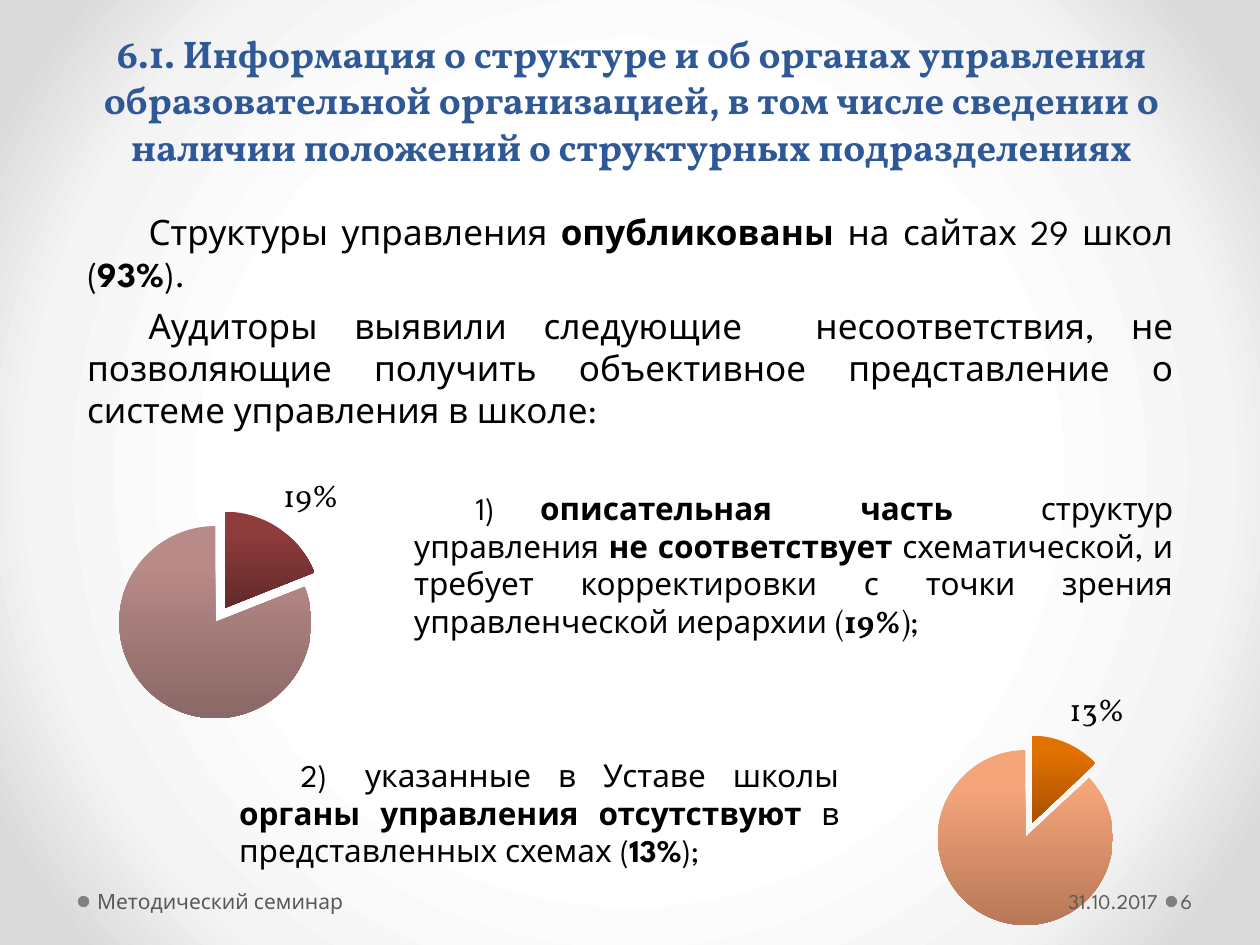
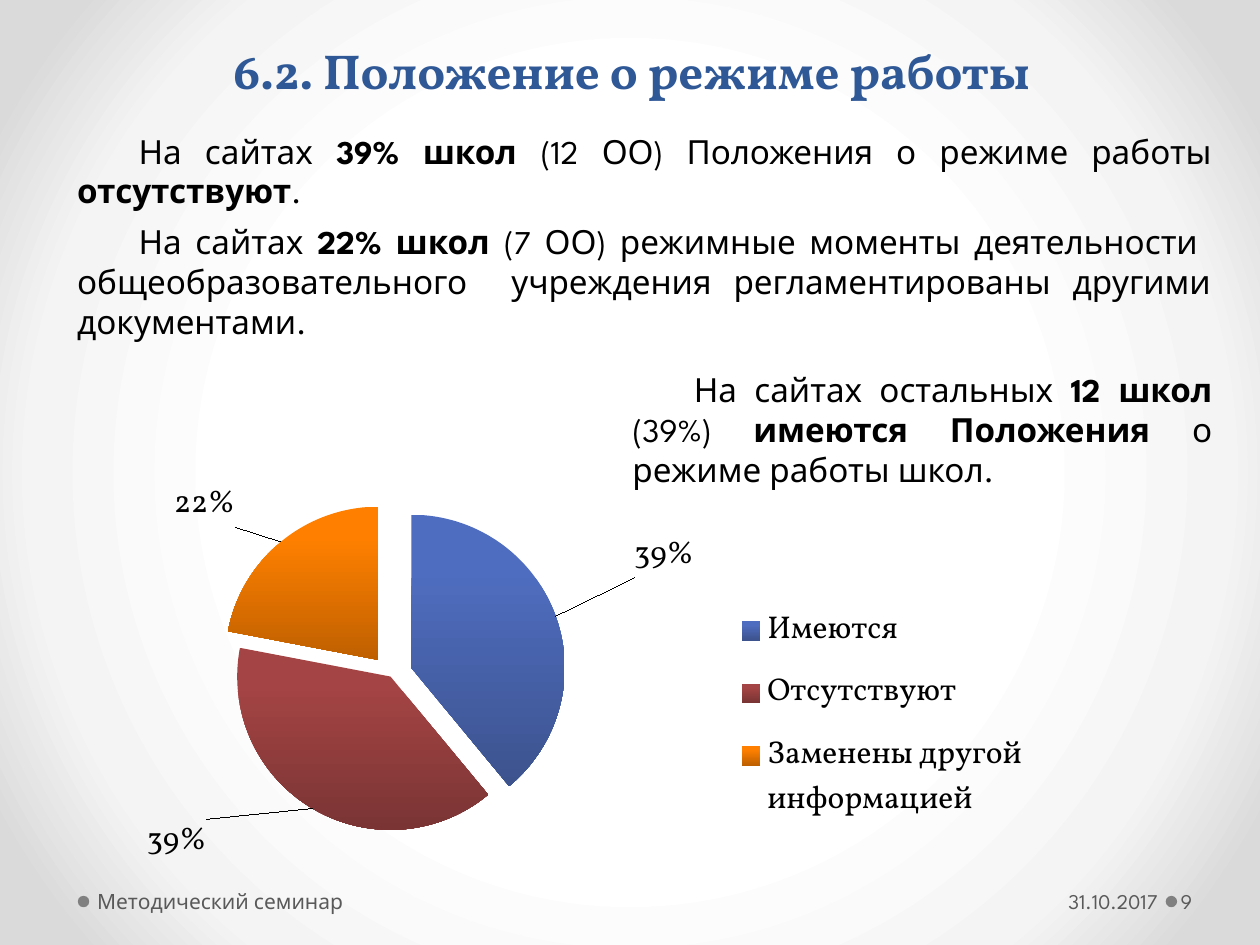
from pptx import Presentation as Deck
from pptx.chart.data import CategoryChartData as Data
from pptx.dml.color import RGBColor as Rgb
from pptx.enum.chart import XL_CHART_TYPE as Kind, XL_LABEL_POSITION as Spot, XL_LEGEND_POSITION as Side
from pptx.enum.shapes import MSO_SHAPE as Form
from pptx.enum.text import MSO_ANCHOR as Anchor, MSO_AUTO_SIZE as Fit, PP_ALIGN as Align
from pptx.oxml import parse_xml
from pptx.oxml.ns import nsdecls
from pptx.util import Cm, Pt

SANS, SERIF = "League Spartan", "Vollkorn"
BLACK, BLUE, GRAY, DOT = "000000", "2F5897", "595959", "808080"
RINGS = [(50, "FFFFFF"), (76, "F4F4F4"), (92, "DADADA")]
FLAT = {"word_wrap": True, "auto_size": Fit.NONE}
PARA = {"alignment": Align.JUSTIFY, "space_before": Pt(0), "space_after": Pt(6)}


def tint(code):
    return Rgb.from_string(code)


def put(item, vals):
    for name, val in vals.items():
        setattr(item, name, val)


def place(item, box):
    put(item, dict(zip(("left", "top", "width", "height"), map(Cm, box))))


def node(text, space):
    head, tail = text.split(">", 1)
    if head.endswith("/"):
        return parse_xml(f"{head[:-1]} {nsdecls(space)}/>{tail}")
    return parse_xml(f"{head} {nsdecls(space)}>{tail}")


def lay(parent, index, inner=False, **part):
    for old in parent.xpath("./c:layout"):
        parent.remove(old)
    body = '<c:layoutTarget val="inner"/>' if inner else ""
    if "w" in part:
        body += '<c:xMode val="edge"/><c:yMode val="edge"/>'
    body += "".join(f'<c:{key} val="{val}"/>' for key, val in part.items())
    parent.insert(index, node(f"<c:layout><c:manualLayout>{body}</c:manualLayout></c:layout>", "c"))


class Page:
    def __init__(self):
        self.deck = Deck()
        put(self.deck, {"slide_width": Cm(25.4), "slide_height": Cm(19.05)})
        self.slide = None
        self.paint()

    def paint(self):
        master = self.deck.slide_master
        master.background.fill.gradient()
        old = master.element.xpath(".//p:bg//a:gradFill")[0]
        stops = "".join(
            f'<a:gs pos="{pos * 1000}"><a:srgbClr val="{code}"/></a:gs>' for pos, code in RINGS)
        old.getparent().replace(old, node(
            f'<a:gradFill rotWithShape="1"><a:gsLst>{stops}</a:gsLst><a:path path="circle">'
            '<a:fillToRect l="50000" t="50000" r="50000" b="50000"/></a:path></a:gradFill>', "a"))

    def start(self):
        self.slide = self.deck.slides.add_slide(self.deck.slide_layouts[1])
        for left in (23.5, 1.57):
            self.dot(left)

    def finish(self, number):
        self.foot("31.10.2017", 17.68, 5.79, (0.25, 0.13), Align.RIGHT)
        self.foot("Методический семинар", 1.83, 7.9, (0.13, 0.25))
        self.foot(number, 23.72, 1.55, (0.08, 0.13))

    def dot(self, left):
        item = self.slide.shapes.add_shape(Form.OVAL, *map(Cm, (left, 18.06, 0.23, 0.23)))
        item.shadow.inherit = False
        item.fill.solid()
        item.fill.fore_color.rgb = tint(DOT)
        item.line.fill.background()

    def run(self, para, text, size, font=SANS, color=BLACK, bold=False):
        item = para.add_run()
        item.text = text
        put(item.font, {"name": font, "size": Pt(size), "bold": bold})
        item.font.color.rgb = tint(color)

    def foot(self, text, left, width, pads, align=Align.LEFT):
        frame = self.slide.shapes.add_textbox(*map(Cm, (left, 17.65, width, 1.02))).text_frame
        put(frame, {**FLAT, "vertical_anchor": Anchor.MIDDLE,
                    "margin_left": Cm(pads[0]), "margin_right": Cm(pads[1])})
        para = frame.paragraphs[0]
        para.alignment = align
        self.run(para, text, 12, color=GRAY)

    def title(self, text, size, box):
        item = self.slide.shapes.title
        place(item, box)
        put(item.text_frame, {**FLAT, "vertical_anchor": Anchor.BOTTOM})
        para = item.text_frame.paragraphs[0]
        para.alignment = Align.CENTER
        self.run(para, text, size, SERIF, BLUE, True)

    def fill(self, frame, lines, size):
        put(frame, FLAT)
        for row, line in enumerate(lines):
            para = frame.add_paragraph() if row else frame.paragraphs[0]
            put(para, PARA)
            props = para._p.get_or_add_pPr()
            props.set("marL", "0")
            props.set("indent", str(Cm(1.24)))
            props.append(node("<a:buNone/>", "a"))
            for odd, part in enumerate(line.split("~")):
                for bold, bit in enumerate(part.split("*")):
                    if bit:
                        self.run(para, bit, size, SERIF if odd % 2 else SANS, bold=bold % 2 == 1)

    def body(self, lines, size, box):
        item = self.slide.placeholders[1]
        place(item, box)
        self.fill(item.text_frame, lines, size)

    def note(self, line, size, box):
        item = self.slide.shapes.add_textbox(*map(Cm, box))
        self.fill(item.text_frame, [line], size)

    def pie(self, box, cats, vals, hues, bursts, plot, shifts, legend=None):
        data = Data(number_format="0%")
        data.categories = cats
        data.add_series("Series 1", vals)
        chart = self.slide.shapes.add_chart(Kind.PIE, *map(Cm, box), data).chart
        put(chart, {"has_title": False, "has_legend": bool(legend)})
        put(chart.font, {"name": SERIF, "size": Pt(18)})
        chart.font.color.rgb = tint(BLACK)
        chart.plots[0].vary_by_categories = True
        series = chart.plots[0].series[0]
        put(series.data_labels, {"show_value": False, "number_format": "0%",
                                 "number_format_is_linked": False})
        root = chart.element
        for spot, (hue, burst) in enumerate(zip(hues, bursts)):
            look = series.points[spot].format
            look.fill.gradient()
            look.fill.gradient_angle = 270
            for stop, code, pos in zip(look.fill.gradient_stops, hue, (0.2, 1)):
                stop.color.rgb = tint(code)
                stop.position = pos
            look.line.fill.background()
            shape = root.xpath(f".//c:dPt[c:idx/@val='{spot}']/c:spPr")[0]
            shape.addprevious(node(f'<c:explosion val="{burst}"/>', "c"))
        for spot, shift in enumerate(shifts):
            series.points[spot].data_label.position = Spot.OUTSIDE_END
            if shift:
                label = root.xpath(f".//c:dLbl[c:idx/@val='{spot}']")[0]
                lay(label, 1, x=shift[0], y=shift[1])
        lay(root.xpath(".//c:plotArea")[0], 0, True, **dict(zip("xywh", plot)))
        if legend:
            put(chart.legend, {"position": Side.RIGHT, "include_in_layout": False})
            chart.legend.font.size = Pt(18)
            lay(root.xpath(".//c:legend")[0], 1, **dict(zip("xywh", legend)))


def main():
    page = Page()
    page.start()
    page.title("6.1. Информация о структуре и об органах управления образовательной организацией, "
               "в том числе сведении о наличии положений о структурных подразделениях",
               22, (1.3, 0.53, 22.86, 3))
    page.body(["Структуры управления *опубликованы* на сайтах 29 школ (*93%*). ",
               "Аудиторы выявили следующие  несоответствия, не позволяющие получить "
               "объективное представление о системе управления в школе:"],
              20, (1.5, 4.11, 22.4, 4.6))
    page.note("1)\t*описательная часть* структур управления *не соответствует* схематической, "
              "и требует корректировки с точки зрения управленческой иерархии ~(*19%*)~;",
              18, (8.1, 9.73, 15.8, 3.33))
    page.pie((0.51, 8.92, 8.61, 5.99), ["1", "2"], [0.19, 0.81],
             [("8F3C3C", "622A2A"), ("B88A88", "8A6866")], (18, 0),
             (0.22, 0.28, 0.45, 0.65), [None])
    page.pie((16.94, 13.34, 8.2, 5.72), ["1", "2"], [0.13, 0.87],
             [("E07000", "A85000"), ("F5A57A", "B87858")], (18, 0),
             (0.24, 0.31, 0.43, 0.62), [None])
    page.note("2)\tуказанные в Уставе школы *органы управления отсутствуют* "
              "в представленных схемах (*13%*);", 18, (4.57, 15.11, 12.6, 2.57))
    page.finish("6")

    page.start()
    page.title("6.2. Положение о режиме работы", 28, (1.3, 0.33, 22.86, 1.8))
    page.body(["На сайтах *39% школ *(12 ОО) Положения о режиме работы *отсутствуют*. ",
               "На сайтах *22% школ *(7 ОО) режимные моменты деятельности  "
               "общеобразовательного  учреждения регламентированы другими документами."],
              19, (1.3, 2.51, 23.39, 4.8))
    page.pie((1.09, 9.12, 20.6, 8.99), ["Имеются", "Отсутствуют", "Заменены другой информацией"],
             [0.39, 0.39, 0.22],
             [("4F6DC0", "3D538E"), ("A54444", "7A3434"), ("FF8000", "BF6000")], (14, 1, 13),
             (0.18, 0.15, 0.3, 0.7), [(0.07, -0.08), (-0.1, 0.01), (-0.04, -0.02)],
             (0.65, 0.31, 0.32, 0.56))
    page.note("На сайтах остальных *12 школ *(39%) *имеются Положения *о режиме работы школ.",
              19, (12.5, 7.32, 12.19, 2.69))
    page.finish("9")
    page.deck.save("out.pptx")


if __name__ == "__main__":
    main()
